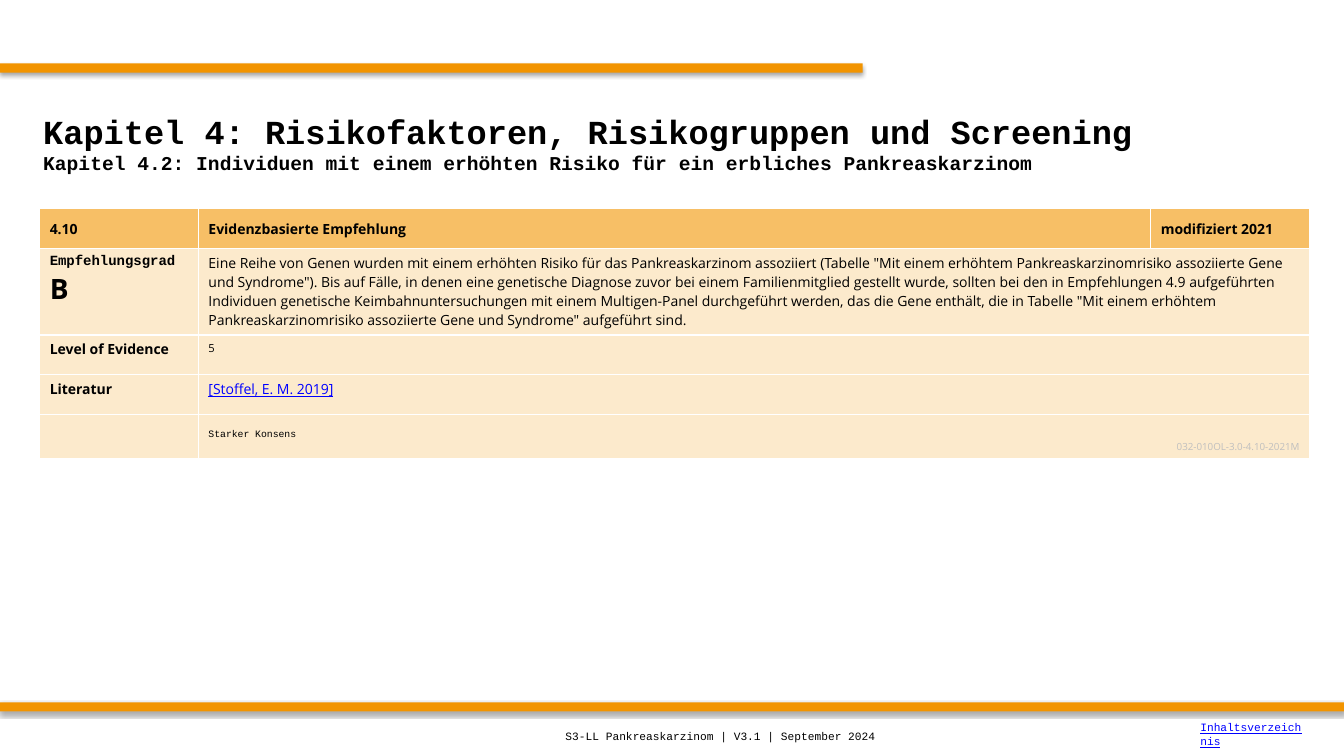
from lxml.etree import SubElement
from pptx import Presentation
from pptx.dml.color import RGBColor
from pptx.enum.shapes import MSO_SHAPE
from pptx.enum.text import MSO_ANCHOR, PP_ALIGN
from pptx.oxml.ns import qn
from pptx.util import Cm, Pt

MONO, SANS = "Courier New", "Open Sans"
ORANGE, HEADER, BODY = "F29400", "F7BF66", "FCEACC"
BLACK, LINK, GREY = "000000", "0000FF", "BFBFBF"

RECOMMENDATION = (
    'Eine Reihe von Genen wurden mit einem erhöhten Risiko für das Pankreaskarzinom assoziiert '
    '(Tabelle "Mit einem erhöhtem Pankreaskarzinomrisiko assoziierte Gene und Syndrome"). '
    'Bis auf Fälle, in denen eine genetische Diagnose zuvor bei einem Familienmitglied gestellt wurde, '
    'sollten bei den in Empfehlungen 4.9 aufgeführten Individuen genetische Keimbahnuntersuchungen '
    'mit einem Multigen-Panel durchgeführt werden, das die Gene enthält, die in Tabelle '
    '"Mit einem erhöhtem Pankreaskarzinomrisiko assoziierte Gene und Syndrome" aufgeführt sind.'
)


def rgb(color):
    return RGBColor.from_string(color)


def para(text, size=10, name=SANS, color=BLACK, bold=False, underline=False, align=PP_ALIGN.LEFT):
    return text, size, name, color, bold, underline, align


def write(tf, paras):
    for i, (text, size, name, color, bold, underline, align) in enumerate(paras):
        p = tf.add_paragraph() if i else tf.paragraphs[0]
        p.add_run().text = text
        p.alignment = align
        font = p.font
        font.size, font.name, font.bold, font.underline = Pt(size), name, bold, underline
        font.color.rgb = rgb(color)


def add_bar(s, top, width):
    sp = s.shapes.add_shape(MSO_SHAPE.RECTANGLE, 0, Cm(top), width, Cm(0.23))
    sp.fill.solid()
    sp.fill.fore_color.rgb = rgb(ORANGE)
    sp.line.fill.background()
    sp.shadow.inherit = False
    effects = sp.element.spPr.find(qn("a:effectLst"))
    shadow = SubElement(effects, qn("a:outerShdw"), blurRad=str(Pt(3.1)), dist=str(Pt(1.8)),
                        dir="5400000", rotWithShape="0")
    color = SubElement(shadow, qn("a:srgbClr"), val=BLACK)
    SubElement(color, qn("a:alpha"), val="35000")


def add_text(s, left, top, width, height, *paras):
    tf = s.shapes.add_textbox(Cm(left), Cm(top), Cm(width), Cm(height)).text_frame
    tf.word_wrap = True
    tf.vertical_anchor = MSO_ANCHOR.MIDDLE
    write(tf, paras)


def fill_cell(cell, color, anchor, paras):
    cell.fill.solid()
    cell.fill.fore_color.rgb = rgb(color)
    cell.vertical_anchor = anchor
    write(cell.text_frame, paras)


def add_recommendation(s):
    widths, heights = (4, 24, 4), (1, 2.18, 1, 1, 1.12)
    table = s.shapes.add_table(len(heights), len(widths), Cm(1), Cm(5.26),
                               Cm(sum(widths)), Cm(sum(heights))).table
    table.horz_banding = False
    for column, width in zip(table.columns, widths):
        column.width = Cm(width)
    for row, height in zip(table.rows, heights):
        row.height = Cm(height)

    for col, text in enumerate(("4.10", "Evidenzbasierte Empfehlung", "modifiziert 2021")):
        fill_cell(table.cell(0, col), HEADER, MSO_ANCHOR.MIDDLE, [para(text, bold=True)])

    top, bottom = MSO_ANCHOR.TOP, MSO_ANCHOR.BOTTOM
    rows = [
        ([para("Empfehlungsgrad", name=MONO, bold=True), para("B", 20, bold=True)],
         [para(RECOMMENDATION)], top),
        ([para("Level of Evidence", bold=True)], [para("5", 8)], top),
        ([para("Literatur", bold=True)],
         [para("[Stoffel, E. M. 2019]", color=LINK, underline=True)], top),
        ([], [para("Starker Konsens", 7, MONO),
              para("032-010OL-3.0-4.10-2021M", 7, color=GREY, align=PP_ALIGN.RIGHT)], bottom),
    ]
    for i, (label, content, anchor) in enumerate(rows, 1):
        table.cell(i, 1).merge(table.cell(i, 2))
        fill_cell(table.cell(i, 0), BODY, top, label)
        fill_cell(table.cell(i, 1), BODY, anchor, content)


def main():
    prs = Presentation()
    prs.slide_width, prs.slide_height = Cm(33.87), Cm(19.05)
    s = prs.slides.add_slide(prs.slide_layouts[6])

    add_bar(s, 1.6, Cm(21.74))
    add_bar(s, 17.7, prs.slide_width)
    add_text(s, 0.84, 2.11, 32.18, 2.97,
             para("Kapitel 4: Risikofaktoren, Risikogruppen und Screening", 24, MONO, bold=True),
             para("Kapitel 4.2: Individuen mit einem erhöhten Risiko für ein erbliches Pankreaskarzinom",
                  14, MONO, bold=True))
    add_recommendation(s)
    add_text(s, 14, 18.06, 14, 1, para("S3-LL Pankreaskarzinom | V3.1 | September 2024", 8, MONO))
    add_text(s, 30, 18, 3.1, 1, para("Inhaltsverzeichnis", 8, MONO, LINK, underline=True))
    prs.save("out.pptx")


if __name__ == "__main__":
    main()
